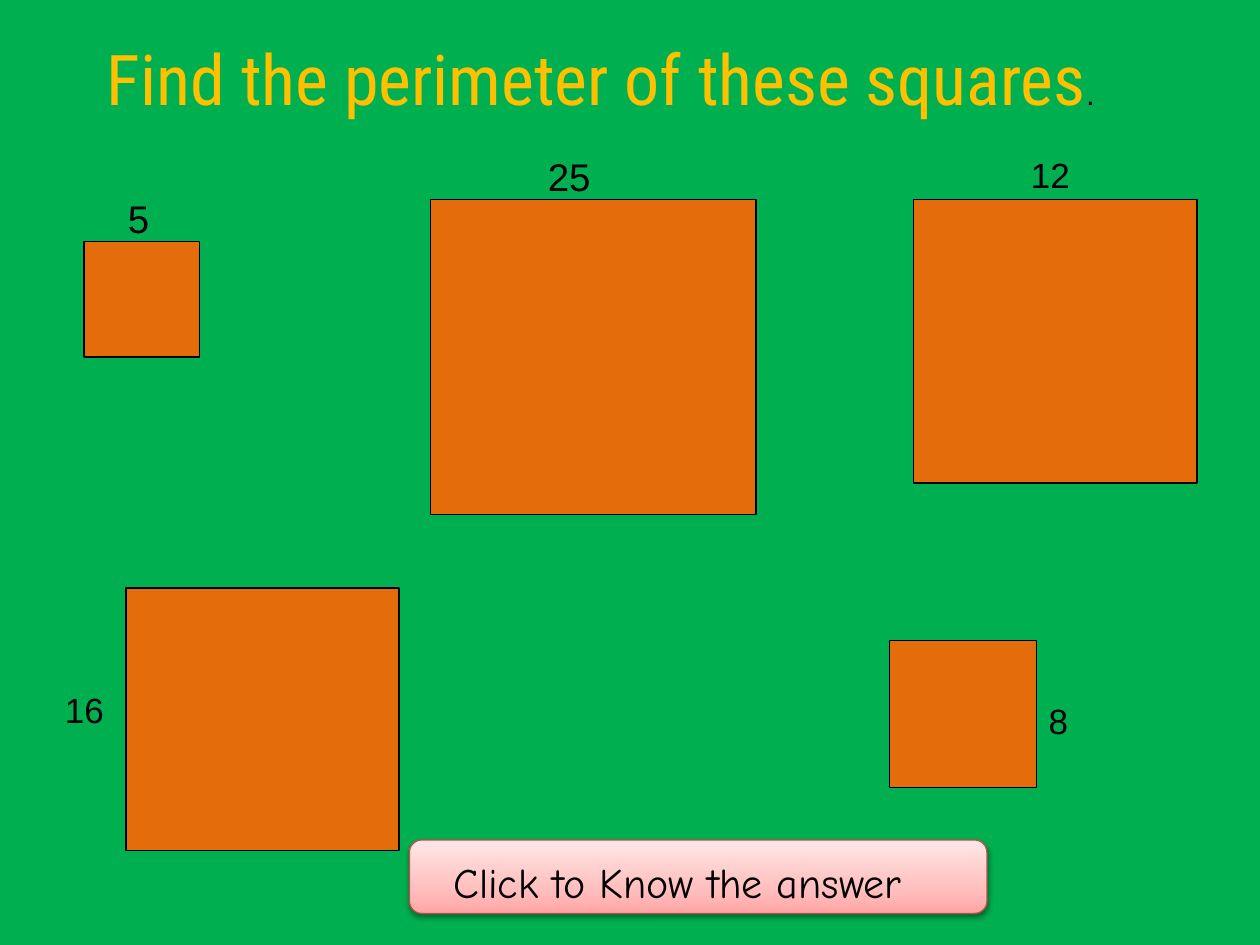
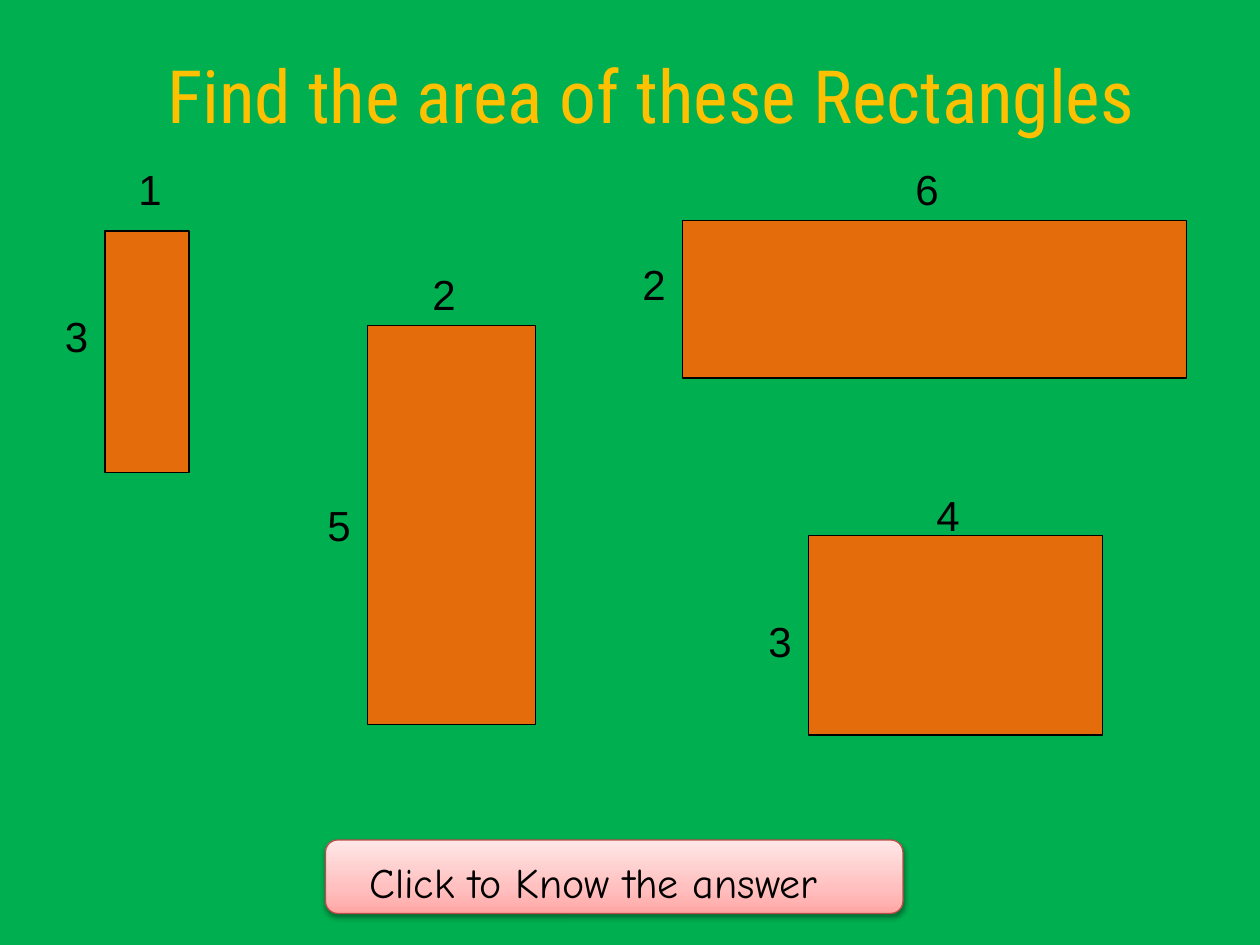
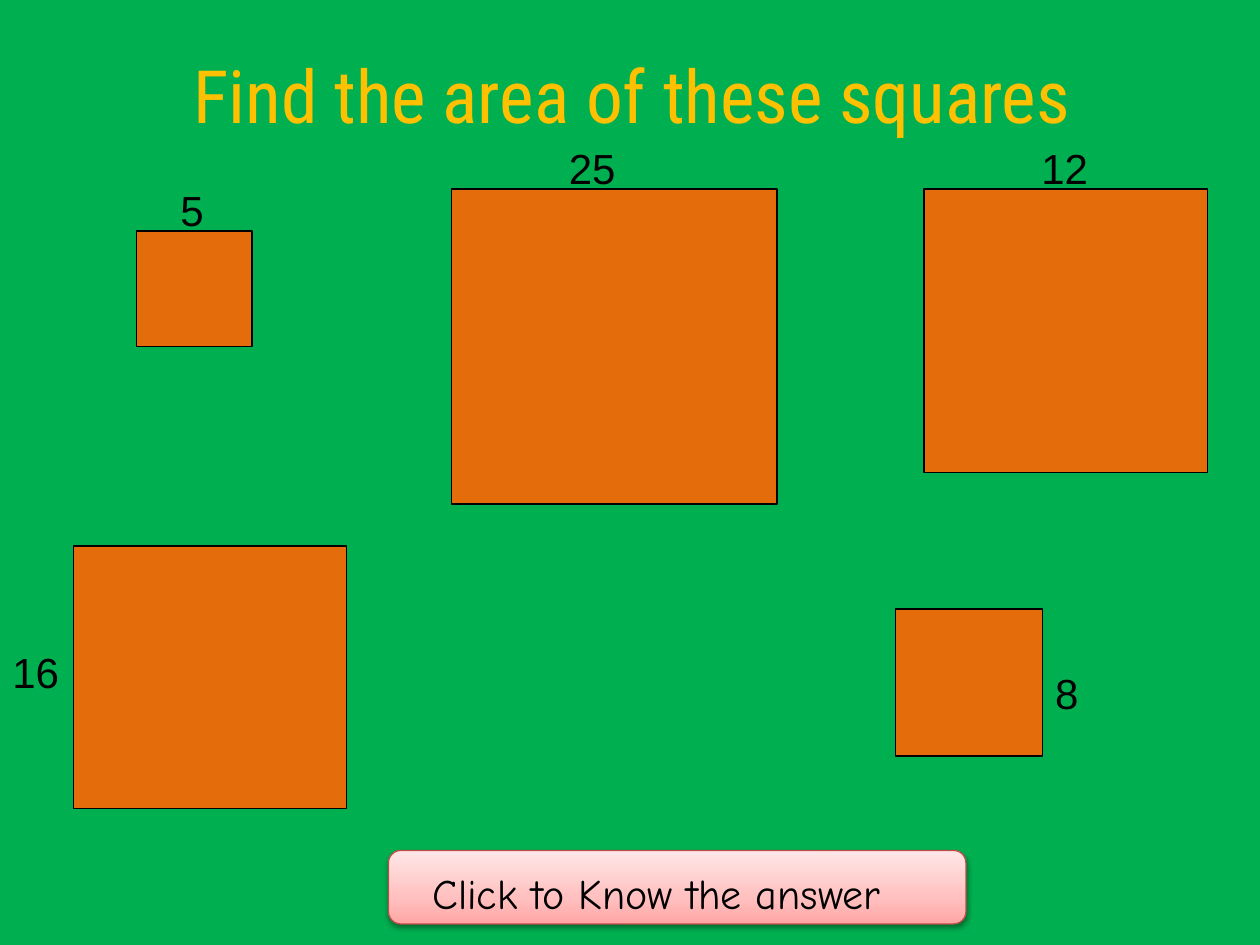
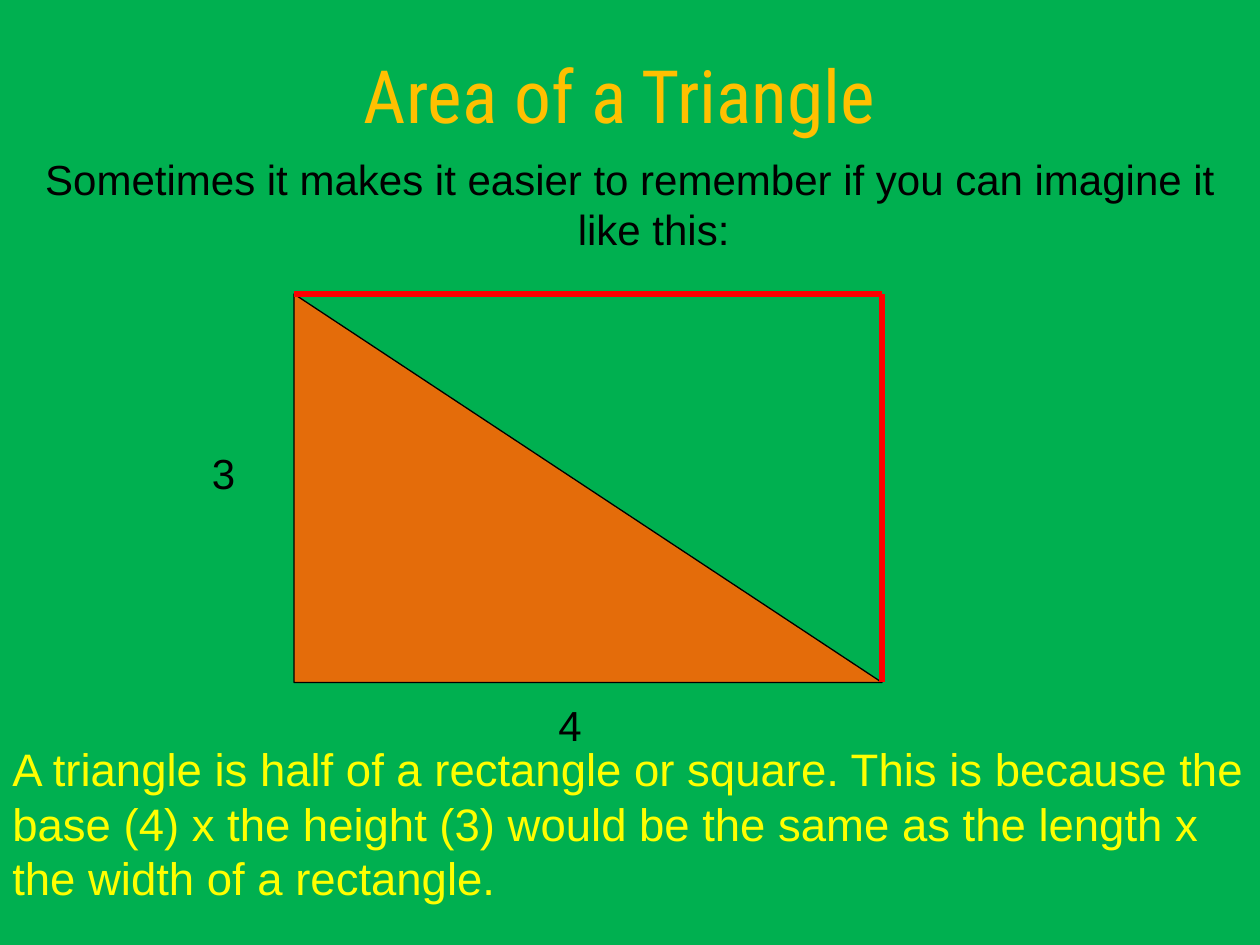
from copy import deepcopy
from dataclasses import dataclass

from pptx import Presentation
from pptx.dml.color import RGBColor
from pptx.enum.shapes import MSO_CONNECTOR, MSO_SHAPE
from pptx.enum.text import MSO_ANCHOR, MSO_AUTO_SIZE, PP_ALIGN
from pptx.oxml.ns import qn
from pptx.shapes.autoshape import Shape
from pptx.shapes.shapetree import GroupShapes, SlideShapes
from pptx.slide import Slide
from pptx.text.text import _Paragraph as Paragraph
from pptx.util import Emu, Pt
from lxml.etree import SubElement

PX = 7620
WIDTH, HEIGHT = 1200, 900
GREEN, ORANGE, GOLD = "00B050", "E46C0A", "FFC000"
BLACK, RED, YELLOW = "000000", "FF0000", "FFFF00"
BUTTON_LINE = "BF4C48"
BUTTON_STOPS = ((0, "FFA6A5"), (0.35, "FFC0BF"), (1, "FFE7E7"))
BODY_FONT, TITLE_FONT, BUTTON_FONT = "Arial", "Roboto Condensed", "Comic Neue"

Shapes = SlideShapes | GroupShapes
Box = tuple[int, int, int, int]


@dataclass(frozen=True)
class Label:
    text: str
    dx: int
    dy: int
    size: int = 24


@dataclass(frozen=True)
class Figure:
    x: int
    y: int
    w: int
    h: int
    labels: tuple[Label, ...]


@dataclass(frozen=True)
class Square:
    side: str
    w: int
    h: int
    dx: int
    dy: int

    def placed(self, x: int, y: int, size: int = 24) -> Figure:
        return Figure(x, y, self.w, self.h, (Label(self.side, self.dx, self.dy, size),))


FIVE = Square("5", 110, 110, 30, -50)
TWELVE = Square("12", 270, 270, 100, -50)
TWENTY_FIVE = Square("25", 310, 300, 100, -50)
EIGHT = Square("8", 140, 140, 140, 50)
SIXTEEN = Square("16", 260, 250, -70, 90)

PERIMETER_SQUARES = (
    FIVE.placed(80, 230, 22),
    TWELVE.placed(870, 190, 20),
    TWENTY_FIVE.placed(410, 190, 22),
    EIGHT.placed(847, 610, 20),
    SIXTEEN.placed(120, 560, 20),
)
AREA_SQUARES = (
    FIVE.placed(130, 220),
    TWELVE.placed(880, 180),
    TWENTY_FIVE.placed(430, 180),
    EIGHT.placed(853, 580),
    SIXTEEN.placed(70, 520),
)
RECTANGLES = (
    Figure(100, 220, 80, 230, (Label("1", 20, -70), Label("3", -50, 70))),
    Figure(770, 510, 280, 190, (Label("3", -50, 70), Label("4", 110, -50))),
    Figure(350, 310, 160, 380, (Label("2", 50, -60), Label("5", -50, 160))),
    Figure(650, 210, 480, 150, (Label("2", -50, 30), Label("6", 210, -60))),
)


def px(*lengths: int) -> list[Emu]:
    return [Emu(n * PX) for n in lengths]


def rgb(color: str) -> RGBColor:
    return RGBColor.from_string(color)


def add_run(p: Paragraph, text: str, *, size: int, color: str, font: str) -> None:
    r = p.add_run()
    r.text = text
    r.font.size = Pt(size)
    r.font.name = font
    r.font.color.rgb = rgb(color)


def add_text(shapes: Shapes, text: str, box: Box, *, size: int = 24,
             color: str = BLACK, font: str = BODY_FONT, wrap: bool = True,
             align: PP_ALIGN = PP_ALIGN.LEFT, anchor: MSO_ANCHOR = MSO_ANCHOR.TOP,
             grow: bool = True, hanging: int = 0) -> Paragraph:
    tf = shapes.add_textbox(*px(*box)).text_frame
    tf.word_wrap = wrap
    tf.vertical_anchor = anchor
    tf.auto_size = MSO_AUTO_SIZE.SHAPE_TO_FIT_TEXT if grow else MSO_AUTO_SIZE.NONE
    p = tf.paragraphs[0]
    p.alignment = align
    if hanging:
        pPr = p._p.get_or_add_pPr()
        pPr.set("marL", str(hanging * PX))
        pPr.set("indent", str(-hanging * PX))
    add_run(p, text, size=size, color=color, font=font)
    return p


def add_solid(shapes: Shapes, kind: MSO_SHAPE, box: Box, fill: str = ORANGE,
              line: str | None = BLACK) -> Shape:
    sp = shapes.add_shape(kind, *px(*box))
    sp.shadow.inherit = False
    sp.fill.solid()
    sp.fill.fore_color.rgb = rgb(fill)
    if line:
        sp.line.color.rgb = rgb(line)
        sp.line.width = Pt(0.75)
    else:
        sp.line.fill.background()
    return sp


def add_label(shapes: Shapes, label: Label, x: int = 0, y: int = 0) -> None:
    w = round(len(label.text) * label.size * 0.93) + 24
    h = 2 * label.size + 12
    add_text(shapes, label.text, (x + label.dx, y + label.dy, w, h),
             size=label.size, wrap=False)


def add_figures(s: Slide, figures: tuple[Figure, ...]) -> None:
    for f in figures:
        shapes = s.shapes.add_group_shape().shapes
        add_solid(shapes, MSO_SHAPE.RECTANGLE, (f.x, f.y, f.w, f.h))
        for label in f.labels:
            add_label(shapes, label, f.x, f.y)


def add_title(s: Slide, text: str, box: Box) -> None:
    add_text(s.shapes, text, box, size=42, color=GOLD, font=TITLE_FONT,
             align=PP_ALIGN.CENTER, anchor=MSO_ANCHOR.MIDDLE, grow=False)


def add_button(s: Slide, x: int, y: int) -> None:
    shapes = s.shapes.add_group_shape().shapes
    sp = add_solid(shapes, MSO_SHAPE.ROUNDED_RECTANGLE, (x, y, 550, 70), line=BUTTON_LINE)
    sp.fill.gradient()
    sp.fill.gradient_angle = 90
    spPr = sp._element.spPr
    stops = spPr.find(".//" + qn("a:gsLst"))
    stops.append(deepcopy(stops[0]))
    for stop, (position, color) in zip(sp.fill.gradient_stops, BUTTON_STOPS):
        stop.position = position
        stop.color.rgb = rgb(color)
    shadow = SubElement(spPr.find(qn("a:effectLst")), qn("a:outerShdw"),
                        blurRad="40000", dist="20000", dir="5400000", rotWithShape="0")
    tint = SubElement(shadow, qn("a:srgbClr"), val=BLACK)
    SubElement(tint, qn("a:alpha"), val="38000")
    add_text(shapes, "Click to Know the answer", (x + 30, y + 10, 520, 60), font=BUTTON_FONT)


def add_line(s: Slide, x1: int, y1: int, x2: int, y2: int) -> None:
    c = s.shapes.add_connector(MSO_CONNECTOR.STRAIGHT, *px(x1, y1, x2, y2))
    c.line.color.rgb = rgb(RED)
    c.line.width = Pt(3)
    SubElement(c._element.spPr, qn("a:effectLst"))


def add_slide(prs: Presentation) -> Slide:
    s = prs.slides.add_slide(prs.slide_layouts[6])
    add_solid(s.shapes, MSO_SHAPE.RECTANGLE, (0, 0, WIDTH, HEIGHT), GREEN, None)
    return s


def perimeter_of_squares(prs: Presentation) -> None:
    s = add_slide(prs)
    add_figures(s, PERIMETER_SQUARES)
    p = add_text(s.shapes, "Find the perimeter of these squares", (90, 28, 1020, 92),
                 size=40, color=GOLD, font=TITLE_FONT)
    add_run(p, ".", size=18, color=BLACK, font=BODY_FONT)
    add_button(s, 390, 800)


def area_of_rectangles(prs: Presentation) -> None:
    s = add_slide(prs)
    add_title(s, "Find the area of these Rectangles", (100, 0, 1040, 180))
    add_figures(s, RECTANGLES)
    add_button(s, 310, 800)


def area_of_squares(prs: Presentation) -> None:
    s = add_slide(prs)
    add_title(s, "Find the area of these squares ", (40, 0, 1140, 180))
    add_figures(s, AREA_SQUARES)
    add_button(s, 370, 810)


def area_of_triangle(prs: Presentation) -> None:
    s = add_slide(prs)
    add_title(s, "Area of a Triangle", (50, 30, 1080, 120))
    add_text(s.shapes,
             "Sometimes it makes it easier to remember if you can imagine it like this:",
             (0, 140, WIDTH, 140), align=PP_ALIGN.CENTER, grow=False, hanging=45)
    left, top, w, h = 280, 280, 560, 370
    right, bottom = left + w, top + h
    add_solid(s.shapes, MSO_SHAPE.RIGHT_TRIANGLE, (left, top, w, h))
    add_label(s.shapes, Label("3", 190, 420))
    add_label(s.shapes, Label("4", 520, 660))
    add_line(s, left, top, right, top)
    add_line(s, right, bottom, right, top)
    add_text(s.shapes,
             "A triangle is half of a rectangle or square. This is because the base (4) x "
             "the height (3) would be the same as the length x the width of a rectangle.",
             (0, 700, 1210, 222), size=26, color=YELLOW)


def main() -> None:
    prs = Presentation()
    prs.slide_width, prs.slide_height = px(WIDTH, HEIGHT)
    perimeter_of_squares(prs)
    area_of_rectangles(prs)
    area_of_squares(prs)
    area_of_triangle(prs)
    prs.save("out.pptx")


if __name__ == "__main__":
    main()
